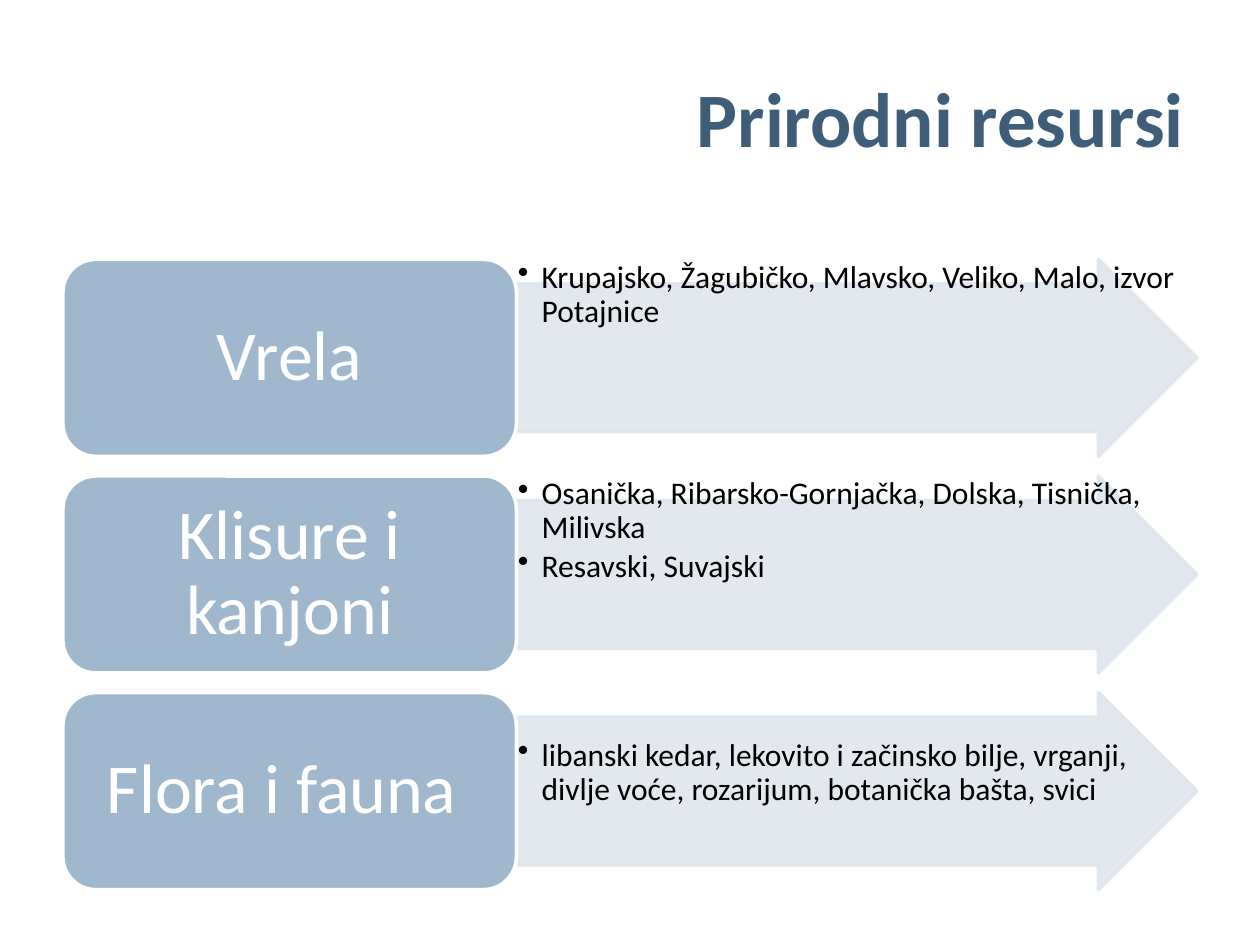
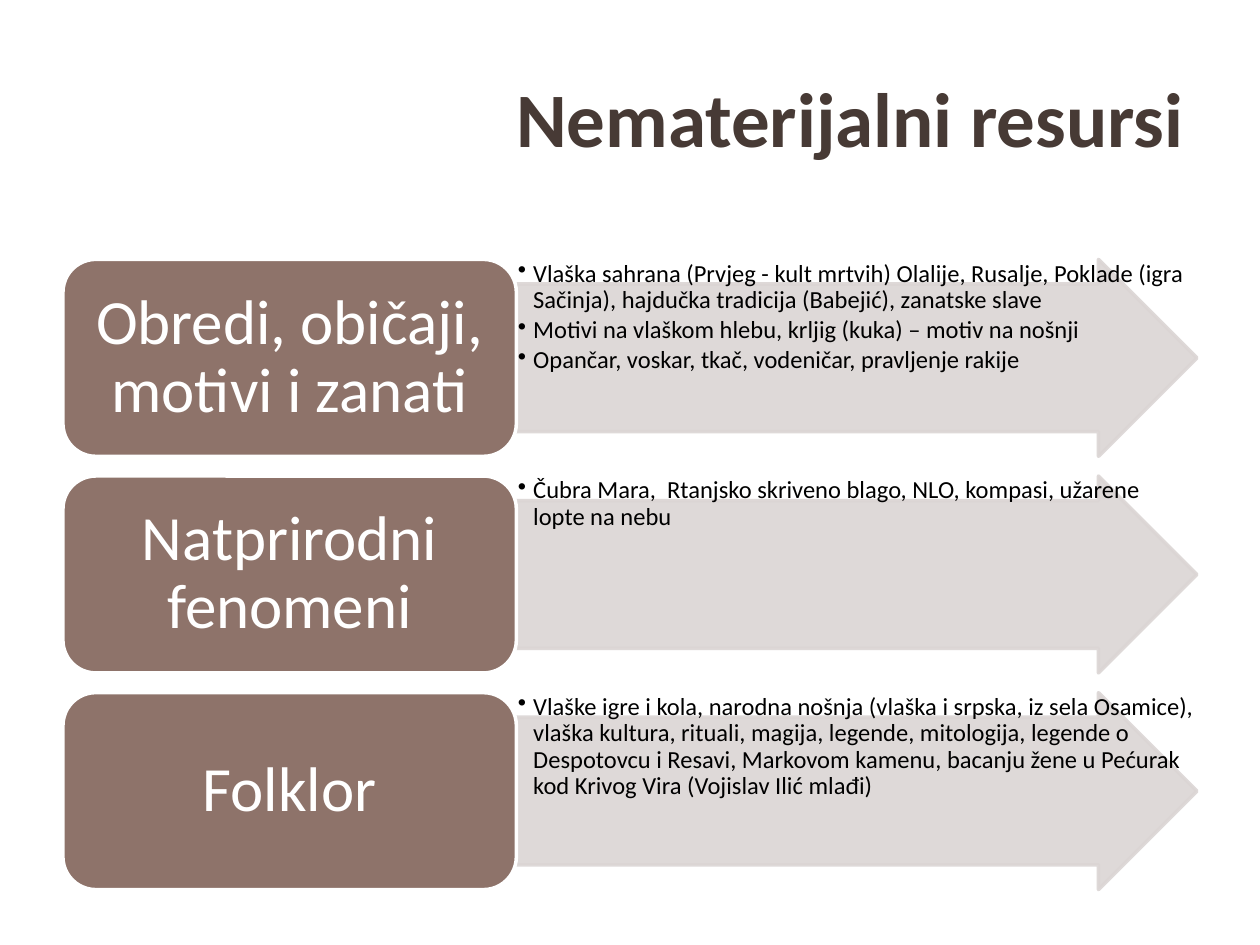
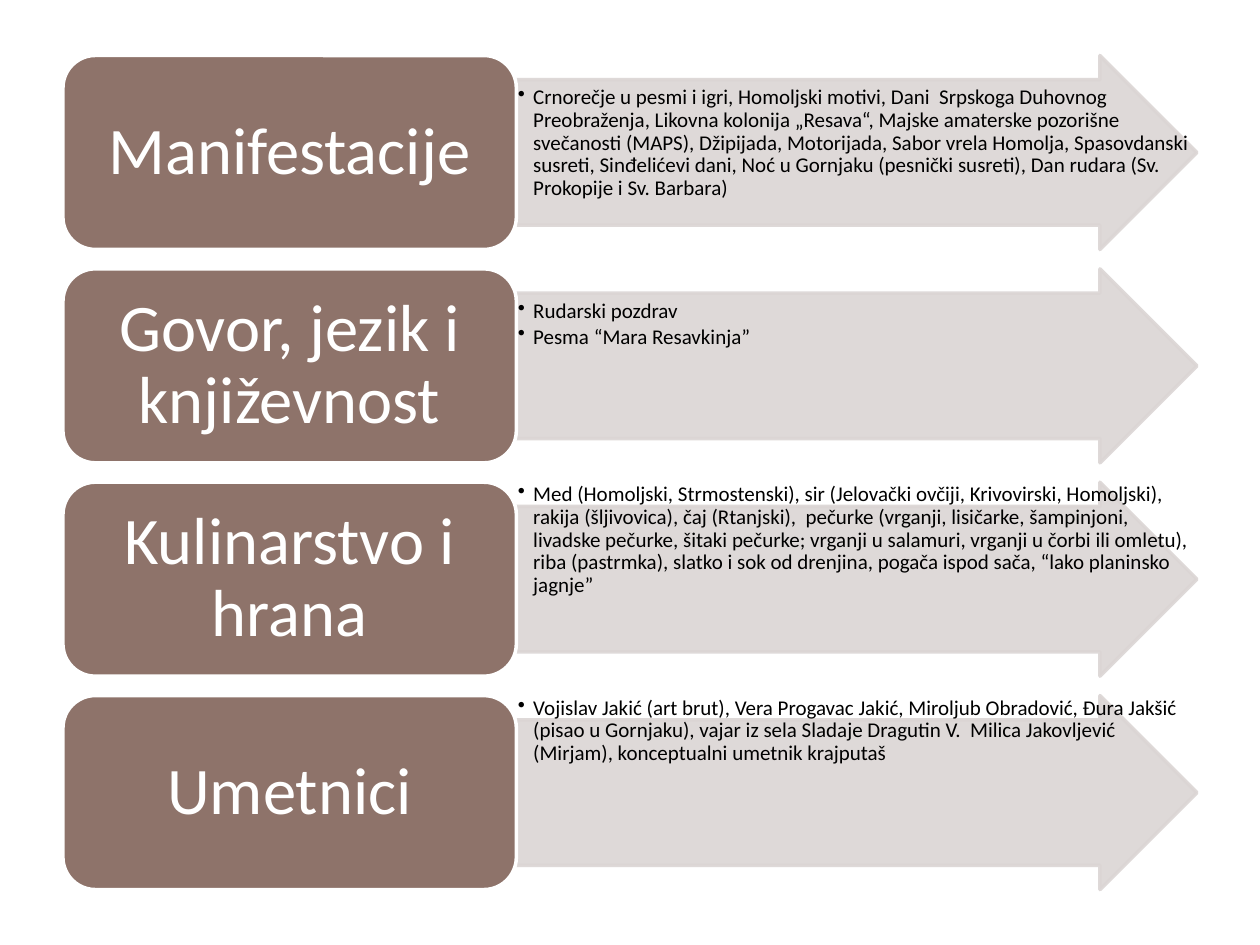
import pptx
import pptx.dml.color
import pptx.enum.shapes
import pptx.enum.text
import pptx.oxml.ns
import pptx.util
from lxml import etree

Cm = pptx.util.Cm
Pt = pptx.util.Pt
SHAPE = pptx.enum.shapes.MSO_SHAPE
ALIGN = pptx.enum.text.PP_ALIGN
ANCHOR = pptx.enum.text.MSO_ANCHOR

FONT = "Calibri"
WHITE, BLACK = "FFFFFF", "000000"
BLUE = {"title": "3E5D78", "label": "9FB8CD", "arrow": "DFE6ED"}
BROWN = {"title": "473A35", "label": "8E736A", "arrow": "DBD5D4"}

LEFT, LABEL_WIDTH, ARROW_WIDTH = 1.27, 9.14, 13.72
ARROW_LEFT = LEFT + LABEL_WIDTH
ROW_PITCH = 1.1  # row heights from one row's top to the next

# A row is label, list of details, and whether the details start one line down.
NATURAL_ROWS = [
    ("Vrela", ["Krupajsko, Žagubičko, Mlavsko, Veliko, Malo, izvor Potajnice"], False),
    ("Klisure i kanjoni",
     ["Osanička, Ribarsko-Gornjačka, Dolska, Tisnička, Milivska",
      "Resavski, Suvajski"], False),
    ("Flora i fauna ",
     ["libanski kedar, lekovito i začinsko bilje, vrganji, divlje voće, "
      "rozarijum, botanička bašta, svici"], True),
]
INTANGIBLE_ROWS = [
    ("Obredi, običaji, motivi i zanati",
     ["Vlaška sahrana (Prvjeg - kult mrtvih) Olalije, Rusalje, Poklade (igra "
      "Sačinja), hajdučka tradicija (Babejić), zanatske slave",
      "Motivi na vlaškom hlebu, krljig (kuka) – motiv na nošnji",
      "Opančar, voskar, tkač, vodeničar, pravljenje rakije"], False),
    ("Natprirodni fenomeni",
     ["Čubra Mara,  Rtanjsko skriveno blago, NLO, kompasi, užarene lopte na nebu"],
     False),
    ("Folklor",
     ["Vlaške igre i kola, narodna nošnja (vlaška i srpska, iz sela Osamice), "
      "vlaška kultura, rituali, magija, legende, mitologija, legende o Despotovcu "
      "i Resavi, Markovom kamenu, bacanju žene u Pećurak kod Krivog Vira "
      "(Vojislav Ilić mlađi)"], False),
]
CULTURE_ROWS = [
    ("Manifestacije",
     ["Crnorečje u pesmi i igri, Homoljski motivi, Dani  Srpskoga Duhovnog "
      "Preobraženja, Likovna kolonija „Resava“, Majske amaterske pozorišne "
      "svečanosti (MAPS), Džipijada, Motorijada, Sabor vrela Homolja, "
      "Spasovdanski susreti, Sinđelićevi dani, Noć u Gornjaku (pesnički susreti), "
      "Dan rudara (Sv. Prokopije i Sv. Barbara)"], True),
    ("Govor, jezik i književnost",
     ["Rudarski pozdrav", "Pesma “Mara Resavkinja”"], True),
    ("Kulinarstvo i hrana",
     ["Med (Homoljski, Strmostenski), sir (Jelovački ovčiji, Krivovirski, "
      "Homoljski), rakija (šljivovica), čaj (Rtanjski),  pečurke (vrganji, "
      "lisičarke, šampinjoni, livadske pečurke, šitaki pečurke; vrganji u "
      "salamuri, vrganji u čorbi ili omletu), riba (pastrmka), slatko i sok od "
      "drenjina, pogača ispod sača, “lako planinsko jagnje”"], False),
    ("Umetnici",
     ["Vojislav Jakić (art brut), Vera Progavac Jakić, Miroljub Obradović, Đura "
      "Jakšić (pisao u Gornjaku), vajar iz sela Sladaje Dragutin V.  Milica "
      "Jakovljević (Mirjam), konceptualni umetnik krajputaš"], False),
]


def color(value):
    return pptx.dml.color.RGBColor.from_string(value)


def write_text(frame, lines, size, ink, bold=False, align=ALIGN.LEFT,
               anchor=ANCHOR.TOP, insets=(0.25, 0.13, 0.25, 0.13),
               spacing=1.0, after=0.0, bullet_indent=None):
    """Fill a frame with one paragraph a line; after is a share of the size."""
    frame.word_wrap = True
    frame.vertical_anchor = anchor
    (frame.margin_left, frame.margin_top,
     frame.margin_right, frame.margin_bottom) = map(Cm, insets)
    for index, line in enumerate(lines):
        para = frame.paragraphs[0] if index == 0 else frame.add_paragraph()
        para.alignment = align
        para.line_spacing = spacing
        para.space_after = Pt(after * size)
        if bullet_indent:
            add_bullet(para, bullet_indent)
        span = para.add_run()
        span.text = line
        span.font.name = FONT
        span.font.size = Pt(size)
        span.font.bold = bold
        span.font.color.rgb = color(ink)


def add_bullet(para, indent):
    properties = para._p.get_or_add_pPr()
    properties.set("marL", str(Cm(indent)))
    properties.set("indent", str(-Cm(indent)))
    bullet = etree.SubElement(properties, pptx.oxml.ns.qn("a:buChar"))
    bullet.set("char", "•")


def add_box(page, kind, left, top, width, height, fill, line):
    box = page.shapes.add_shape(kind, Cm(left), Cm(top), Cm(width), Cm(height))
    box.shadow.inherit = False
    box.fill.solid()
    box.fill.fore_color.rgb = color(fill)
    box.line.color.rgb = color(line)
    box.line.width = Pt(2)
    return box


def set_opacity(box, percent):
    """Apply one opacity to the fill and the outline."""
    for tint in box._element.spPr.iter(pptx.oxml.ns.qn("a:srgbClr")):
        alpha = etree.SubElement(tint, pptx.oxml.ns.qn("a:alpha"))
        alpha.set("val", str(percent * 1000))


def add_title(page, text, ink):
    box = page.shapes.add_textbox(Cm(LEFT), Cm(0.76), Cm(22.86), Cm(3.18))
    write_text(box.text_frame, [text], 44, ink, bold=True,
               align=ALIGN.RIGHT, anchor=ANCHOR.MIDDLE)


def add_arrow(page, top, height, fill):
    arrow = add_box(page, SHAPE.RIGHT_ARROW, ARROW_LEFT, top, ARROW_WIDTH, height,
                    fill, fill)
    arrow.adjustments[0] = 0.75
    arrow.adjustments[1] = 0.5
    set_opacity(arrow, 90)


def add_details(page, lines, top, height, size, indent, lowered):
    box = page.shapes.add_textbox(Cm(ARROW_LEFT), Cm(top), Cm(ARROW_WIDTH), Cm(height))
    inset_top = 0.03 + (0.05 * size if lowered else 0)
    write_text(box.text_frame, lines, size, BLACK, spacing=0.9, after=0.15,
               insets=(0.03, inset_top, 0.03, 0.03), bullet_indent=indent)


def add_label(page, text, top, height, size, fill):
    label = add_box(page, SHAPE.ROUNDED_RECTANGLE, LEFT, top, LABEL_WIDTH, height,
                    fill, WHITE)
    write_text(label.text_frame, [text], size, WHITE, align=ALIGN.CENTER,
               anchor=ANCHOR.MIDDLE, insets=(0.2, 0, 0.2, 0),
               spacing=0.9, after=0.35)


def add_rows(page, rows, palette, top, height, label_size, detail_size, indent):
    for index, (label, details, lowered) in enumerate(rows):
        row_top = top + index * ROW_PITCH * height
        add_arrow(page, row_top, height, palette["arrow"])
        add_details(page, details, row_top, height, detail_size, indent, lowered)
        add_label(page, label, row_top, height, label_size, palette["label"])


def main():
    deck = pptx.Presentation()
    deck.slide_width, deck.slide_height = Cm(25.4), Cm(19.05)
    blank = deck.slide_layouts[6]

    natural = deck.slides.add_slide(blank)
    add_title(natural, "Prirodni resursi", BLUE["title"])
    add_rows(natural, NATURAL_ROWS, BLUE, top=5.23, height=3.97,
             label_size=40, detail_size=18, indent=0.48)

    intangible = deck.slides.add_slide(blank)
    add_title(intangible, "Nematerijalni resursi", BROWN["title"])
    add_rows(intangible, INTANGIBLE_ROWS, BROWN, top=5.23, height=3.97,
             label_size=36, detail_size=14, indent=0.31)

    culture = deck.slides.add_slide(blank)
    add_rows(culture, CULTURE_ROWS, BROWN, top=1.12, height=3.91,
             label_size=38, detail_size=12, indent=0.31)

    deck.save("out.pptx")


if __name__ == "__main__":
    main()
